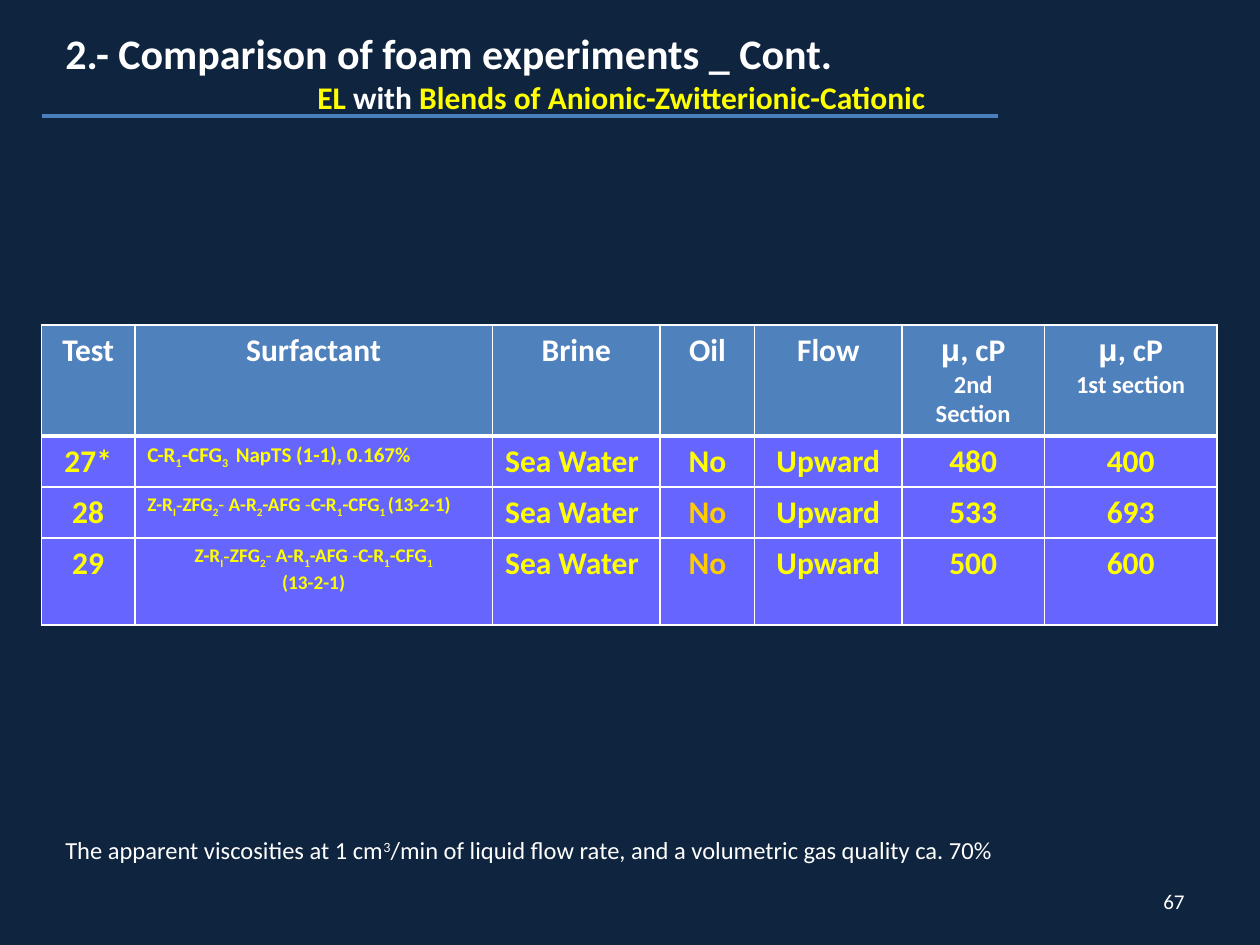
from lxml import etree
from pptx import Presentation
from pptx.dml.color import RGBColor
from pptx.enum import shapes, text
from pptx.oxml import ns
from pptx.util import Inches, Pt

NAVY = RGBColor(0x0F, 0x24, 0x3E)
WHITE = RGBColor(0xFF, 0xFF, 0xFF)
YELLOW = RGBColor(0xFF, 0xFF, 0x00)
GOLD = RGBColor(0xFF, 0xCC, 0x00)
BLUE = RGBColor(0x4F, 0x81, 0xBD)
VIOLET = RGBColor(0x66, 0x66, 0xFF)
RULE = RGBColor(0x4B, 0x7E, 0xBC)
LEFT, MID, RIGHT = text.PP_ALIGN.LEFT, text.PP_ALIGN.CENTER, text.PP_ALIGN.RIGHT

# Content: a line is a list of (text, style) runs
SUB, SUP = {"base": -25}, {"base": 30}
THIN = {"bold": False}


def blend(num):
    return [("Z-R", {}), ("I", SUB), ("-", {"font": "Times New Roman"}),
            ("ZFG", {}), ("2", SUB), ("-", THIN), (" A-R", {}), (num, SUB),
            ("-AFG ", {}), ("-", THIN), ("C-R", {}), ("1", SUB),
            ("-CFG", {}), ("1", SUB)]


TITLE = [("2.- Comparison of foam experiments _ Cont.", {})]
TOPIC = [("EL", {}), (" with ", {"color": WHITE}),
         ("Blends of Anionic-Zwitterionic-Cationic", {})]
NOTE = [("The apparent viscosities at 1 cm", {}), ("3", SUP),
        ("/min of liquid flow rate, and a volumetric gas quality ca. 70%", {})]
PAGE = [("67", {})]
HEADS = ["Test", "Surfactant", "Brine", "Oil", "Flow", "2nd Section", "1st section"]
MU = [("μ", {"font": "Arial"}), (", cP", {})]
RATIO = ("(13-2-1)", {})
# Test, surfactant lines, size, alignment, oil colour, viscosities
TESTS = [
    ("27*", [[("C-R", {}), ("1", SUB), ("-CFG", {}), ("3 ", SUB),
              (" NapTS (1-1), 0.167%", {})]], 12, LEFT, YELLOW, "480", "400"),
    ("28", [blend("2") + [(" ", SUB), RATIO]], 11, LEFT, GOLD, "533", "693"),
    ("29", [blend("1"), [RATIO]], 11, MID, GOLD, "500", "600"),
]
COLS = [0.74, 2.84, 1.33, 0.75, 1.17, 1.13, 1.37]
ROWS = [0.88, 0.4, 0.4, 0.69]


def write(para, runs, size, color, bold=True, align=LEFT):
    para.alignment = align
    for words, style in runs:
        run = para.add_run()
        run.text = words
        font = run.font
        font.size = Pt(size)
        font.name = style.get("font", "Calibri")
        font.bold = style.get("bold", bold)
        font.color.rgb = style.get("color", color)
        if "base" in style:
            font._element.set("baseline", str(style["base"] * 1000))


def add_box(slide, left, top, width, height):
    frame = slide.shapes.add_textbox(*map(Inches, (left, top, width, height))).text_frame
    frame.word_wrap = True
    return frame


def edge(cell, widths):
    props = cell._tc.get_or_add_tcPr()
    for spot, (side, width) in enumerate(widths.items()):
        line = etree.Element(ns.qn("a:ln" + side), w=str(Pt(width)))
        fill = etree.SubElement(line, ns.qn("a:solidFill"))
        etree.SubElement(fill, ns.qn("a:srgbClr"), val=str(WHITE))
        props.insert(spot, line)


def fill_cell(cell, lines, color):
    """Each line is (runs, size, alignment)."""
    frame = cell.text_frame
    for spot, (runs, size, align) in enumerate(lines):
        para = frame.add_paragraph() if spot else frame.paragraphs[0]
        write(para, runs, size, color, align=align)


def plain(words, align=MID):
    return [([(words, {})], 18, align)]


def add_grid(slide):
    grid = slide.shapes.add_table(len(ROWS), len(COLS), Inches(0.33), Inches(2.58),
                                  Inches(sum(COLS)), Inches(sum(ROWS))).table
    for col, width in zip(grid.columns, COLS):
        col.width = Inches(width)
    for row, height in zip(grid.rows, ROWS):
        row.height = Inches(height)

    # Fills and borders, with a thick rule under the header
    for r in range(len(ROWS)):
        for c in range(len(COLS)):
            cell = grid.cell(r, c)
            cell.fill.solid()
            cell.fill.fore_color.rgb = VIOLET if r else BLUE
            edge(cell, {"L": 1, "R": 1, "T": 3 if r == 1 else 1, "B": 1 if r else 3})

    # Header
    for c, head in enumerate(HEADS):
        lines = plain(head)
        if c >= 5:
            lines = [(MU, 18, MID), ([(head, {})], 14, MID)]
        fill_cell(grid.cell(0, c), lines, WHITE)

    # Tests
    for r, (test, mix, size, align, oil, second, first) in enumerate(TESTS, 1):
        row = [plain(test), [(runs, size, align) for runs in mix],
               plain("Sea Water", LEFT), plain("No"), plain("Upward"),
               plain(second), plain(first)]
        for c, lines in enumerate(row):
            fill_cell(grid.cell(r, c), lines, oil if c == 3 else YELLOW)


def main():
    deck = Presentation()
    deck.slide_width, deck.slide_height = Inches(10), Inches(7.5)
    slide = deck.slides.add_slide(deck.slide_layouts[6])
    slide.background.fill.solid()
    slide.background.fill.fore_color.rgb = NAVY

    add_grid(slide)

    # Title with indented topic
    frame = add_box(slide, 0.42, 0.17, 7.16, 0.81)
    write(frame.paragraphs[0], TITLE, 24, WHITE)
    para = frame.add_paragraph()
    write(para, TOPIC, 18, YELLOW)
    para._p.get_or_add_pPr().set("marL", str(Inches(2)))

    # Rule under the title
    rule = slide.shapes.add_connector(shapes.MSO_CONNECTOR.STRAIGHT, Inches(0.33),
                                      Inches(0.92), Inches(7.92), Inches(0.92))
    rule.line.color.rgb = RULE
    rule.line.width = Pt(2.25)
    etree.SubElement(rule._element.spPr, ns.qn("a:effectLst"))

    # Note and page number
    frame = add_box(slide, 0.42, 6.58, 9.17, 0.34)
    write(frame.paragraphs[0], NOTE, 14, WHITE, bold=False)
    frame = add_box(slide, 7.17, 6.95, 2.33, 0.4)
    frame.vertical_anchor = text.MSO_ANCHOR.MIDDLE
    write(frame.paragraphs[0], PAGE, 12, WHITE, bold=False, align=RIGHT)

    deck.save("out.pptx")


if __name__ == "__main__":
    main()
